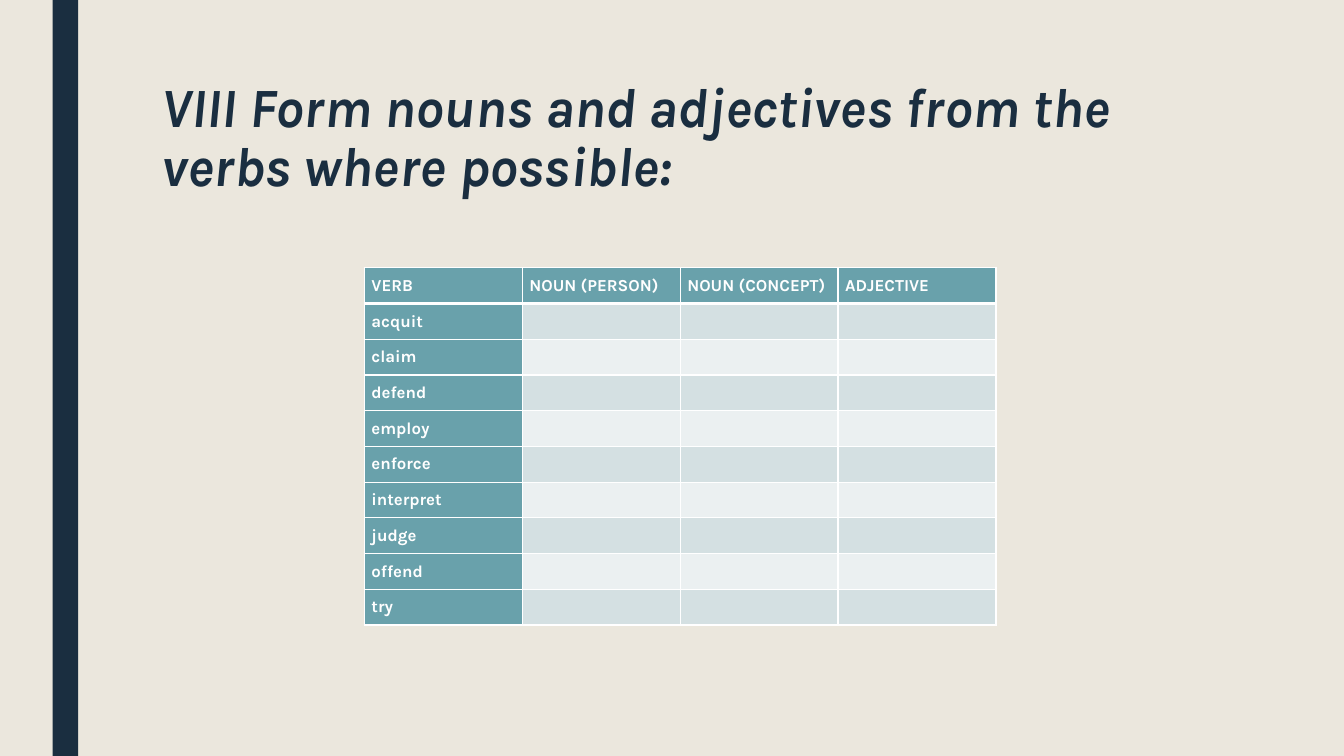
"""Build a vocabulary slide with a verb, noun and adjective table."""
from lxml.etree import SubElement
from pptx import Presentation
from pptx.dml.color import RGBColor
from pptx.enum.shapes import MSO_SHAPE as Shape
from pptx.enum.text import MSO_ANCHOR as Anchor, MSO_AUTO_SIZE as AutoSize, PP_ALIGN as Align
from pptx.oxml.ns import qn
from pptx.util import Cm, Pt

NAVY, TEAL, WHITE, SAND = "1A2E40", "69A1AB", "FFFFFF", "EBE7DD"
BANDS = ["EBF0F1", "D4E0E2"]
HEADERS = ["VERB", "NOUN (PERSON)", "NOUN (CONCEPT)", "ADJECTIVE"]
VERBS = ["acquit", "claim", "defend", "employ", "enforce",
         "interpret", "judge", "offend", "try"]


def paint(fill, color):
    fill.solid()
    fill.fore_color.rgb = RGBColor.from_string(color)


def style_text(para, size, color, align, spacing):
    para.alignment = align
    para.line_spacing = spacing
    para.font.name = "Karla"
    para.font.size = Pt(size)
    para.font.bold = True
    para.font.color.rgb = RGBColor.from_string(color)


deck = Presentation()
deck.slide_width, deck.slide_height = Cm(33.87), Cm(19.05)
page = deck.slides.add_slide(deck.slide_layouts[5])
paint(page.background.fill, SAND)

bar = page.shapes.add_shape(Shape.RECTANGLE, Cm(1.33), 0, Cm(0.64), deck.slide_height)
bar.shadow.inherit = False
paint(bar.fill, NAVY)
bar.line.fill.background()

title = page.shapes.title
title.left, title.top, title.width, title.height = Cm(3.81), Cm(1.9), Cm(26.67), Cm(4.12)
frame = title.text_frame
frame.text = "VIII Form nouns and adjectives from the verbs where possible:"
frame.word_wrap = True
frame.auto_size = AutoSize.NONE
frame.vertical_anchor = Anchor.TOP
heading = frame.paragraphs[0]
style_text(heading, 39.6, NAVY, Align.LEFT, 0.89)
heading.font.italic = True

rows, columns = len(VERBS) + 1, len(HEADERS)
table = page.shapes.add_table(rows, columns, Cm(9.18), Cm(6.75),
                              Cm(3.98 * columns), Cm(0.9 * rows)).table
table.first_col = True
for row in range(rows):
    for column in range(columns):
        cell = table.cell(row, column)
        is_label = row == 0 or column == 0
        cell.margin_left = cell.margin_right = Cm(0.18)
        cell.margin_top = cell.margin_bottom = Cm(0.17 if is_label else 0)
        if is_label:
            cell.text = HEADERS[column] if row == 0 else VERBS[row - 1]
            style_text(cell.text_frame.paragraphs[0], 12, WHITE, Align.JUSTIFY, 1.07)

        properties = cell._tc.get_or_add_tcPr()
        for side in ("L", "R", "T", "B"):
            thick = (row, side) in ((0, "B"), (1, "T"))
            border = SubElement(properties, qn(f"a:ln{side}"), w=str(Pt(3 if thick else 1)))
            SubElement(SubElement(border, qn("a:solidFill")), qn("a:srgbClr"), val=WHITE)
        paint(cell.fill, TEAL if is_label else BANDS[row % 2])

deck.save("out.pptx")
